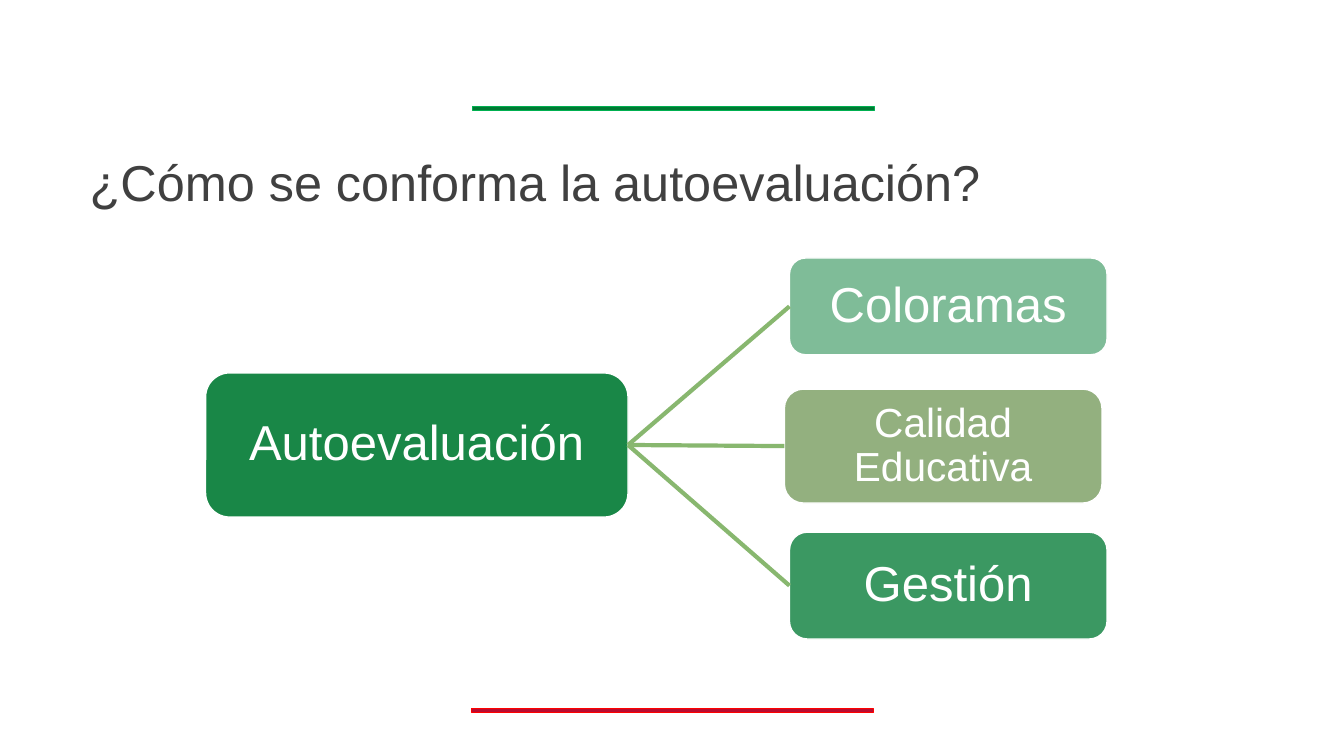
from typing import NamedTuple

from lxml import etree
from pptx import Presentation
from pptx.dml.color import RGBColor
from pptx.enum.shapes import MSO_CONNECTOR, MSO_SHAPE
from pptx.enum.text import MSO_ANCHOR, PP_ALIGN
from pptx.oxml.ns import qn
from pptx.util import Inches, Pt

RECTANGLE = MSO_SHAPE.RECTANGLE
ROUNDED = MSO_SHAPE.ROUNDED_RECTANGLE
STRAIGHT = MSO_CONNECTOR.STRAIGHT
MIDDLE = MSO_ANCHOR.MIDDLE
LEFT, CENTER = PP_ALIGN.LEFT, PP_ALIGN.CENTER

SLIDE_WIDTH, SLIDE_HEIGHT = Inches(13.33), Inches(7.5)
LEFT_SITE, RIGHT_SITE = 1, 3
COLORS = {
    "white": "FFFFFF",
    "heading": "404040",
    "green": "007A33",
    "bright green": "00B050",
    "olive": "548235",
    "link": "88B76F",
    "crimson": "BA0C2F",
    "red": "FF0000",
}


class Area(NamedTuple):
    """Left, top, width and height in percent of the slide's size."""
    left: float
    top: float
    width: float
    height: float


class Rule(NamedTuple):
    area: Area
    fill: str
    outline: str


class Topic(NamedTuple):
    label: str
    area: Area
    fill: str
    opacity: int
    size: int = 35
    inset: float = 0.1


RULES = [
    Rule(Area(35.11, 93.73, 29.86, 0.53), "crimson", "red"),
    Rule(Area(35.18, 14.13, 29.86, 0.53), "green", "bright green"),
]
HEADING_AREA = Area(5.93, 14.8, 87.55, 19.33)
ROOT = Topic("Autoevaluación", Area(15.3, 49.33, 31.43, 19.07), "green", 90)
BRANCHES = [
    Topic("Coloramas", Area(58.74, 34.13, 23.63, 12.8), "green", 50),
    Topic("Calidad Educativa", Area(58.36, 51.47, 23.63, 15.07), "olive", 63, 29, 0.08),
    Topic("Gestión", Area(58.74, 70.4, 23.63, 14.13), "green", 77),
]


def color(name: str) -> RGBColor:
    return RGBColor.from_string(COLORS[name])


def emu(area: Area) -> tuple[int, int, int, int]:
    return (
        round(SLIDE_WIDTH * area.left / 100),
        round(SLIDE_HEIGHT * area.top / 100),
        round(SLIDE_WIDTH * area.width / 100),
        round(SLIDE_HEIGHT * area.height / 100),
    )


def apply(target, formats: dict) -> None:
    for attribute, value in formats.items():
        setattr(target, attribute, value)


def write(frame, wording: str, size: int, ink: str, alignment: PP_ALIGN) -> None:
    apply(frame, {"word_wrap": True, "vertical_anchor": MIDDLE})
    paragraph = frame.paragraphs[0]
    apply(paragraph, {"text": wording, "alignment": alignment, "line_spacing": 0.9})
    font = paragraph.runs[0].font
    apply(font, {"name": "Arial", "size": Pt(size)})
    font.color.rgb = color(ink)


def add_panel(slide, preset: MSO_SHAPE, area: Area, fill: str, outline: str, weight: float):
    panel = slide.shapes.add_shape(preset, *emu(area))
    panel.shadow.inherit = False
    panel.fill.solid()
    panel.fill.fore_color.rgb = color(fill)
    panel.line.color.rgb = color(outline)
    panel.line.width = Pt(weight)
    return panel


def add_topic(slide, topic: Topic):
    panel = add_panel(slide, ROUNDED, topic.area, topic.fill, "white", 1)
    fill_color = panel.element.spPr.find(qn("a:solidFill"))[0]
    etree.SubElement(fill_color, qn("a:alpha"), val=str(topic.opacity * 1000))
    inset = Inches(topic.inset)
    sides = ("margin_left", "margin_top", "margin_right", "margin_bottom")
    apply(panel.text_frame, dict.fromkeys(sides, inset))
    write(panel.text_frame, topic.label, topic.size, "white", CENTER)
    return panel


def link(slide, root, branch) -> None:
    connector = slide.shapes.add_connector(STRAIGHT, 0, 0, 0, 0)
    connector.begin_connect(root, RIGHT_SITE)
    connector.end_connect(branch, LEFT_SITE)
    connector.line.color.rgb = color("link")
    connector.line.width = Pt(3)
    etree.SubElement(connector.element.spPr, qn("a:effectLst"))


def main() -> None:
    presentation = Presentation()
    apply(presentation, {"slide_width": SLIDE_WIDTH, "slide_height": SLIDE_HEIGHT})
    slide = presentation.slides.add_slide(presentation.slide_layouts[6])

    for rule in RULES:
        add_panel(slide, RECTANGLE, rule.area, rule.fill, rule.outline, 0.5)

    heading = slide.shapes.add_textbox(*emu(HEADING_AREA))
    write(heading.text_frame, "¿Cómo se conforma la autoevaluación?", 36, "heading", LEFT)

    root = add_topic(slide, ROOT)
    branches = [add_topic(slide, topic) for topic in BRANCHES]
    for branch in branches:
        link(slide, root, branch)

    presentation.save("out.pptx")


if __name__ == "__main__":
    main()
